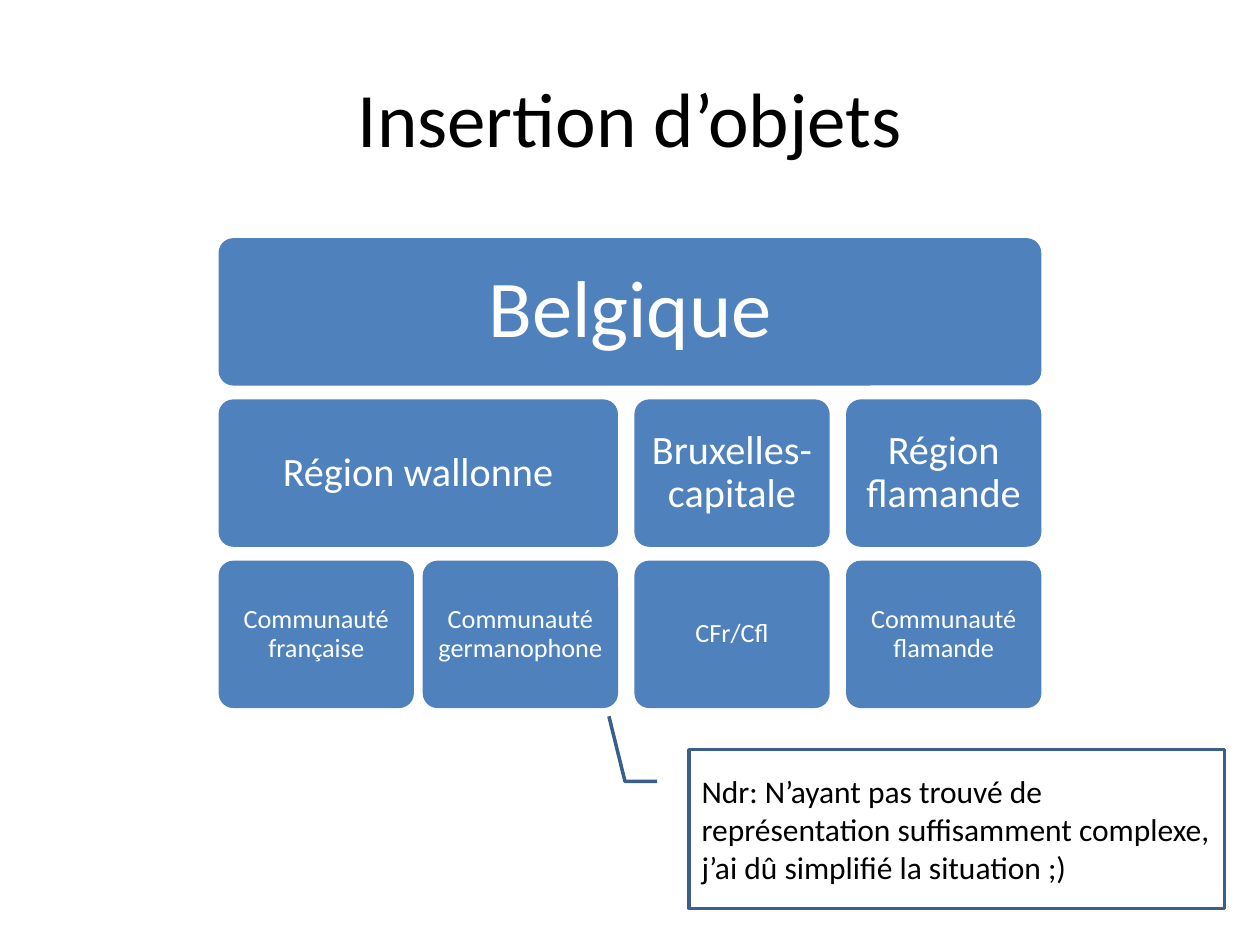
from pptx import Presentation
from pptx.dml.color import RGBColor
from pptx.enum.shapes import MSO_SHAPE
from pptx.enum.text import MSO_ANCHOR, PP_ALIGN
from pptx.util import Inches, Pt

ROUNDED = MSO_SHAPE.ROUNDED_RECTANGLE
CALLOUT = MSO_SHAPE.LINE_CALLOUT_2
MIDDLE = MSO_ANCHOR.MIDDLE
LEFT, CENTER = PP_ALIGN.LEFT, PP_ALIGN.CENTER

COLUMNS, ROWS = 100, 75
LEAF_WIDTH, BOX_HEIGHT, ROW_PITCH = 15.5, 11.7, 12.8
CHART_TOP = 18.9

LEVELS = [
    {"size": 46, "inset": 1.9, "child_gap": 1.3},
    {"size": 23, "inset": 1.0, "child_gap": 0.7},
    {"size": 15, "inset": 0.6, "child_gap": 0},
]

BELGIUM = ("Belgique", [
    ("Région wallonne", [
        ("Communauté française", []),
        ("Communauté germanophone", []),
    ]),
    ("Bruxelles-capitale", [("CFr/Cfl", [])]),
    ("Région flamande", [("Communauté flamande", [])]),
])


def color(value):
    """Turn a hex string into a colour."""
    return RGBColor.from_string(value)


def apply(target, values):
    """Set attributes of an object from a dict."""
    for name, value in values.items():
        setattr(target, name, value)


def branch_width(node, level=0):
    """Measure a node from its leaves and the gaps between its children."""
    children = node[1]
    if not children:
        return LEAF_WIDTH
    gaps = LEVELS[level]["child_gap"] * (len(children) - 1)
    return gaps + sum(branch_width(child, level + 1) for child in children)


class SlideBuilder:
    """Hold the style and the current slide, and draw on its grid."""

    font = "Calibri"
    box_fill = "4F81BD"
    box_text = "FFFFFF"
    callout_line = "3A5F8C"
    dark_text = "000000"

    def __init__(self, presentation):
        """Add a blank slide and measure its grid."""
        self.slide = presentation.slides.add_slide(presentation.slide_layouts[6])
        self.column = presentation.slide_width / COLUMNS
        self.row = presentation.slide_height / ROWS

    def place(self, left, top, width, height):
        """Convert grid units to slide lengths."""
        return (int(left * self.column), int(top * self.row),
                int(width * self.column), int(height * self.row))

    def label(self, shape, text, size, text_color, alignment, inset=None, spacing=None):
        """Fill a shape with one formatted paragraph."""
        frame = shape.text_frame
        apply(frame, {"word_wrap": True, "vertical_anchor": MIDDLE})
        if inset is not None:
            sides = ("left", "top", "right", "bottom")
            apply(frame, {f"margin_{side}": int(inset * self.column) for side in sides})
        paragraph = frame.paragraphs[0]
        apply(paragraph, {"text": text, "alignment": alignment, "line_spacing": spacing})
        font = paragraph.runs[0].font
        apply(font, {"name": self.font, "size": Pt(size)})
        font.color.rgb = color(text_color)

    def title(self, text, *area):
        """Add the centred heading."""
        shape = self.slide.shapes.add_textbox(*self.place(*area))
        self.label(shape, text, 44, self.dark_text, CENTER)

    def box(self, text, level, *area):
        """Add one rounded box of the hierarchy."""
        shape = self.slide.shapes.add_shape(ROUNDED, *self.place(*area))
        shape.shadow.inherit = False
        shape.adjustments[0] = 0.1
        shape.fill.solid()
        shape.fill.fore_color.rgb = color(self.box_fill)
        shape.line.fill.background()
        style = LEVELS[level]
        self.label(shape, text, style["size"], self.box_text, CENTER, style["inset"], 0.9)

    def hierarchy(self, node, left, level=0):
        """Add a node and, below it, its children."""
        text, children = node
        top = CHART_TOP + level * ROW_PITCH
        self.box(text, level, left, top, branch_width(node, level), BOX_HEIGHT)
        for child in children:
            self.hierarchy(child, left, level + 1)
            left += branch_width(child, level + 1) + LEVELS[level]["child_gap"]

    def callout(self, text, pointer, *area):
        """Add an outlined note with a bent pointer."""
        shape = self.slide.shapes.add_shape(CALLOUT, *self.place(*area))
        shape.shadow.inherit = False
        for index, value in enumerate(pointer):
            shape.adjustments[index] = value
        shape.fill.background()
        shape.line.color.rgb = color(self.callout_line)
        shape.line.width = Pt(2)
        self.label(shape, text, 18, self.dark_text, LEFT)


def main():
    """Build and save the slide."""
    presentation = Presentation()
    apply(presentation, {"slide_width": Inches(10), "slide_height": Inches(7.5)})
    builder = SlideBuilder(presentation)
    builder.title("Insertion d’objets", 5, 3, 90, 12.5)
    builder.hierarchy(BELGIUM, (COLUMNS - branch_width(BELGIUM)) / 2)
    builder.callout(
        "Ndr: N’ayant pas trouvé de représentation suffisamment complexe, "
        "j’ai dû simplifié la situation ;)",
        (0.2, -0.06, 0.2, -0.12, -0.21, -0.15),
        54.7, 59.5, 42.5, 12.6,
    )
    presentation.save("out.pptx")


if __name__ == "__main__":
    main()
